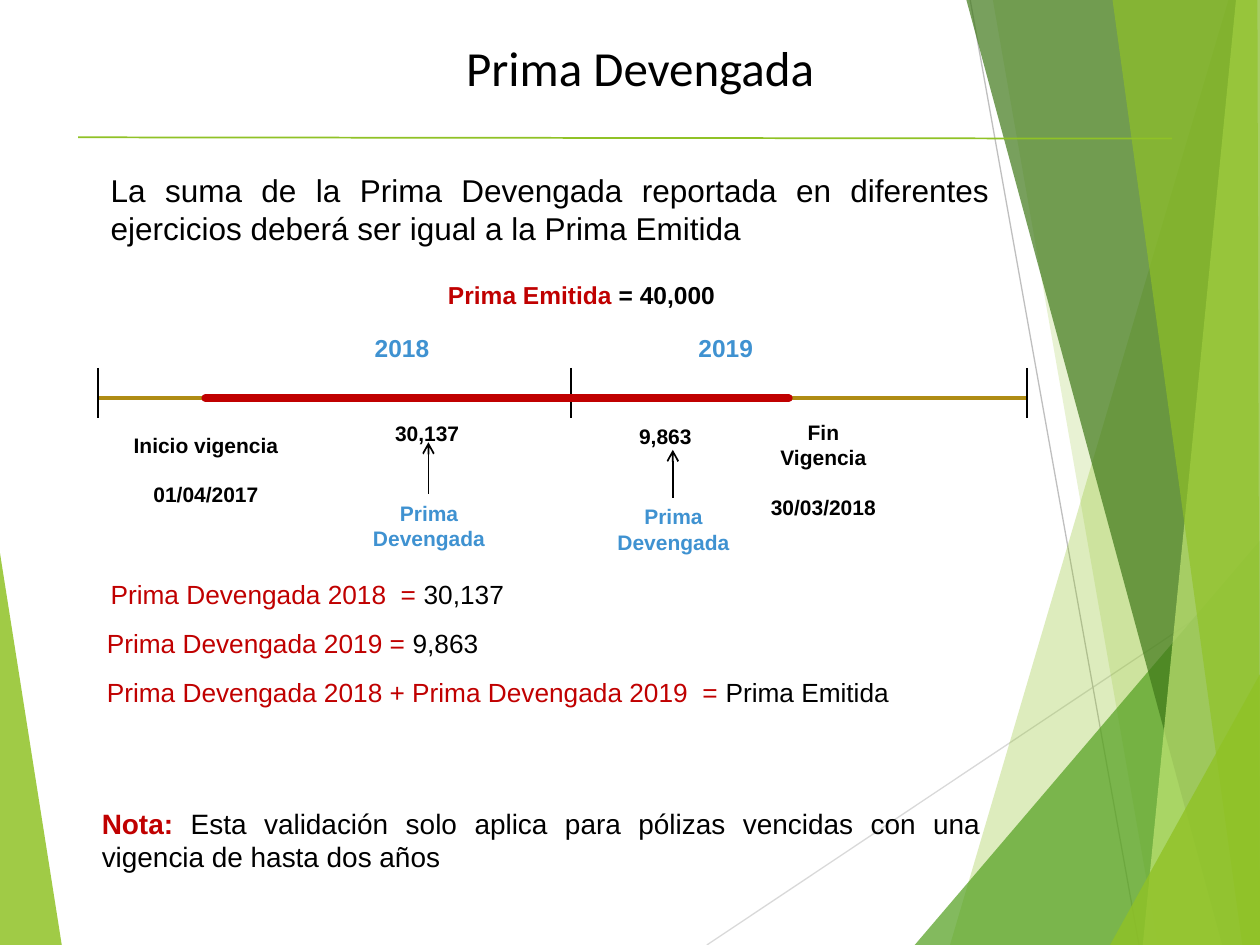
from lxml import etree
from pptx import Presentation
from pptx.dml.color import RGBColor
from pptx.enum.shapes import MSO_CONNECTOR
from pptx.enum.text import MSO_ANCHOR, MSO_AUTO_SIZE, PP_ALIGN
from pptx.oxml.ns import qn
from pptx.util import Inches, Pt

STRAIGHT = MSO_CONNECTOR.STRAIGHT
TOP = MSO_ANCHOR.TOP
NO_FIT = MSO_AUTO_SIZE.NONE
CENTER = PP_ALIGN.CENTER
JUSTIFY = PP_ALIGN.JUSTIFY

COLUMNS, ROWS = 100, 75
BLACK, RED, BLUE = "000000", "C00000", "3F92D1"
GREEN, GOLD = "90C226", "AF8C14"

FACETS = [
    ([(0, 43.9), (4.9, 75), (0, 75)], GREEN, 85),
    ([(97.5, 0), (75.4, 75), (100, 75), (100, 0)], GREEN, 30),
    ([(78.8, 0), (91.9, 75), (100, 75), (100, 0)], GREEN, 20),
    ([(72.6, 75), (100, 42.9), (100, 75)], "54A021", 72),
    ([(76.7, 0), (97, 75), (100, 75), (100, 0)], "3F7819", 70),
    ([(98.1, 0), (90.7, 75), (100, 75), (100, 0)], "C0E474", 70),
    ([(88.3, 0), (98.6, 75), (100, 75), (99.8, 0)], GREEN, 65),
    ([(88.1, 75), (100, 53.5), (100, 75)], GREEN, 80),
]
BACK_LINES = [
    ((56.1, 75), (100, 45.7), "D9D9D9"),
    ((77, 0), (90.4, 75), "BFBFBF"),
]
RESULTS = [
    (7.8, 45.4, "Prima Devengada 2018  = ", "30,137"),
    (7.5, 49.3, "Prima Devengada 2019 = ", "9,863"),
    (7.5, 53.2, "Prima Devengada 2018 + Prima Devengada 2019  = ", "Prima Emitida"),
]
YEARS = [("2018", 26.8), ("2019", 52.5)]
AMOUNTS = [("30,137", 28.8, 32.9), ("9,863", 47.7, 33.1)]
EARNED_LABELS = [(27.6, 39.2, 12.9), (47.4, 39.5, 12.1)]
ARROWS = [(34, 39.2, 35.1), (53.4, 39.5, 35.7)]


def color(value):
    """Turn a hex string into a colour."""
    return RGBColor.from_string(value)


class SlideBuilder:
    """Hold the style and the current slide, and draw on a grid."""

    def __init__(self, presentation, font="Arial"):
        """Add a title-only slide and measure the grid."""
        self.font = font
        self.slide = presentation.slides.add_slide(presentation.slide_layouts[5])
        self.column = presentation.slide_width / COLUMNS
        self.row = presentation.slide_height / ROWS

    def place(self, x, y):
        """Turn columns and rows into slide lengths."""
        return round(x * self.column), round(y * self.row)

    def fill_text(self, shape, paragraphs, size, align, bold=False, font=None, gap=0):
        """Fill a shape with paragraphs of (text, colour[, bold]) runs."""
        frame = shape.text_frame
        frame.word_wrap = True
        frame.auto_size = NO_FIT
        frame.vertical_anchor = TOP
        for index, runs in enumerate(paragraphs):
            paragraph = frame.add_paragraph() if index else frame.paragraphs[0]
            paragraph.alignment = align
            last = index > 0 and index == len(paragraphs) - 1
            paragraph.space_before = Pt(gap if last else 0)
            for text, tint, *weight in runs:
                run = paragraph.add_run()
                run.text = text
                run.font.name = font or self.font
                run.font.size = Pt(size)
                run.font.bold = weight[0] if weight else bold
                run.font.color.rgb = color(tint)

    def title(self, text, box, size, font):
        """Move and format the title placeholder."""
        shape = self.slide.shapes.title
        shape.left, shape.top = self.place(*box[:2])
        shape.width, shape.height = self.place(*box[2:])
        self.fill_text(shape, [[(text, BLACK)]], size, CENTER, font=font)

    def text(self, box, paragraphs, size, align=CENTER, bold=True, gap=0):
        """Add a text box."""
        shape = self.slide.shapes.add_textbox(*self.place(*box[:2]), *self.place(*box[2:]))
        self.fill_text(shape, paragraphs, size, align, bold, gap=gap)

    def line(self, start, end, tint, width=1.0, arrow=False, rounded=False):
        """Add a straight line, with an arrowhead or round ends if asked."""
        connector = self.slide.shapes.add_connector(
            STRAIGHT, *self.place(*start), *self.place(*end))
        connector.line.color.rgb = color(tint)
        connector.line.width = Pt(width)
        properties = connector._element.spPr
        outline = properties.find(qn("a:ln"))
        if rounded:
            outline.set("cap", "rnd")
        if arrow:
            etree.SubElement(outline, qn("a:tailEnd")).set("type", "arrow")
        etree.SubElement(properties, qn("a:effectLst"))

    def facet(self, points, tint, opacity):
        """Add a translucent polygon."""
        corners = [self.place(*point) for point in points]
        builder = self.slide.shapes.build_freeform(*corners[0])
        builder.add_line_segments(corners[1:], close=True)
        shape = builder.convert_to_shape()
        shape.shadow.inherit = False
        shape.line.fill.background()
        shape.fill.solid()
        shape.fill.fore_color.rgb = color(tint)
        fill = shape._element.spPr.find(qn("a:solidFill"))
        etree.SubElement(fill[0], qn("a:alpha")).set("val", str(opacity * 1000))


def draw_background(builder):
    """Draw the green facets and the thin lines among them."""
    builder.facet(*FACETS[0])
    for start, end, tint in BACK_LINES:
        builder.line(start, end, tint, 0.75)
    for facet in FACETS[1:]:
        builder.facet(*facet)


def draw_timeline(builder):
    """Draw the policy timeline with its labels."""
    builder.text((32.7, 21.7, 26.9, 3.4),
                 [[("Prima Emitida ", RED), ("= 40,000", BLACK)]], 14)
    builder.line((7.8, 31.6), (81.5, 31.6), GOLD, 2)
    for x in (7.8, 45.3, 81.5):
        builder.line((x, 29.2), (x, 33.2), BLACK)
    builder.line((16.3, 31.6), (62.6, 31.6), RED, 4.5, rounded=True)
    for year, x in YEARS:
        builder.text((x, 25.9, 10.2, 3.4), [[(year, BLUE)]], 14)
    builder.text((8.7, 33.8, 15.3, 7.1),
                 [[("Inicio vigencia", BLACK)], [("01/04/2017", BLACK)]], 12, gap=14)
    builder.text((59.5, 32.8, 11.7, 9.1),
                 [[(word, BLACK)] for word in ("Fin", "Vigencia", "30/03/2018")],
                 12, gap=14)
    for amount, x, y in AMOUNTS:
        builder.text((x, y, 10.2, 3), [[(amount, BLACK)]], 12)
    for x, y, width in EARNED_LABELS:
        builder.text((x, y, width, 5), [[("Prima Devengada", BLUE)]], 12)
    for x, bottom, top in ARROWS:
        builder.line((x, bottom), (x, top), BLACK, arrow=True)


def main():
    """Build the slide and save it."""
    presentation = Presentation()
    presentation.slide_width, presentation.slide_height = Inches(10), Inches(7.5)
    builder = SlideBuilder(presentation)
    draw_background(builder)
    builder.title("Prima Devengada", (14.1, 2.5, 73.4, 5.7), 28, "Calibri")
    builder.line((6.2, 10.9), (93, 11), GREEN)
    builder.text((7.8, 13.1, 71.7, 7.1), [[(
        "La suma de la Prima Devengada reportada en diferentes ejercicios "
        "deberá ser igual a la Prima Emitida", BLACK)]], 18, JUSTIFY, False)
    draw_timeline(builder)
    for x, y, label, value in RESULTS:
        builder.text((x, y, 71.7, 3.5), [[(label, RED), (value, BLACK)]],
                     15, JUSTIFY, False)
    builder.text((7.1, 63.5, 71.7, 6.4), [[
        ("Nota:", RED, True),
        (" Esta validación solo aplica para pólizas vencidas con una "
         "vigencia de hasta dos años", BLACK)]], 16, JUSTIFY, False)
    presentation.save("out.pptx")


if __name__ == "__main__":
    main()
